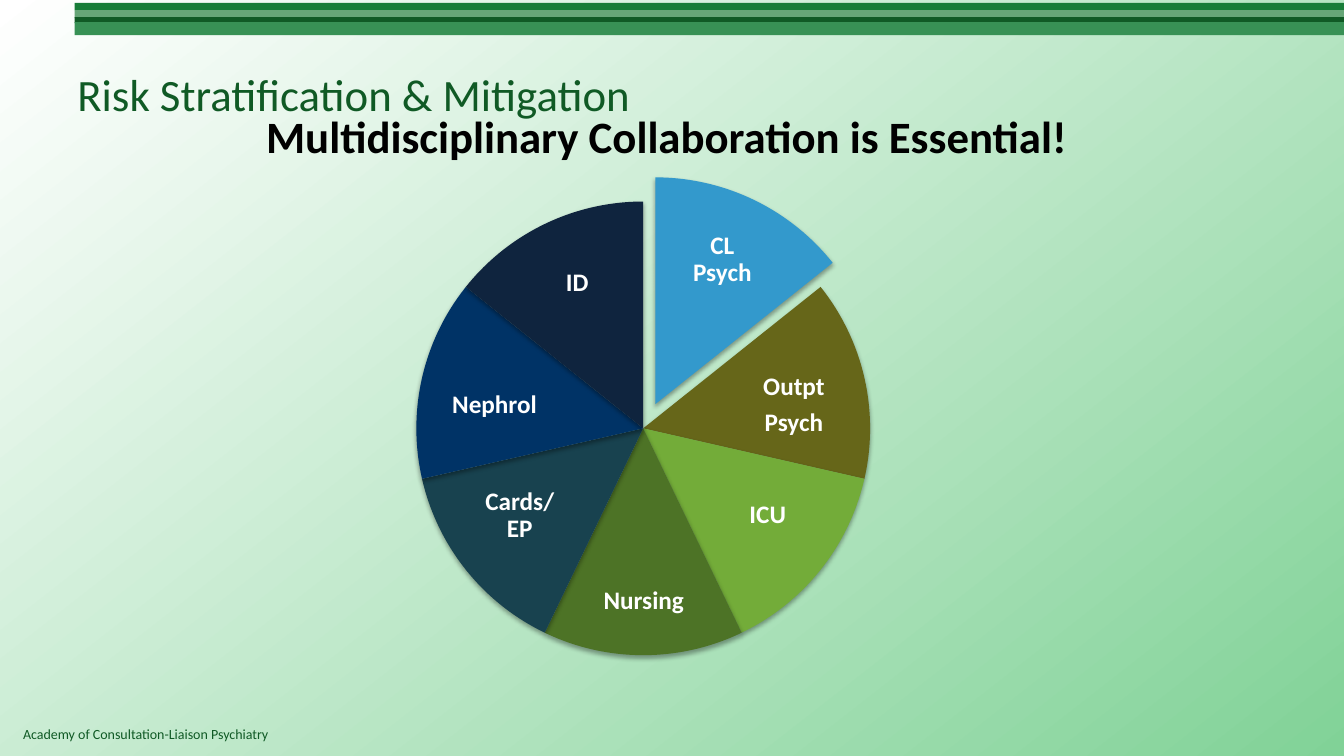
from pptx import Presentation
from pptx.dml.color import RGBColor
from pptx.enum.shapes import MSO_SHAPE as SHAPE
from pptx.enum.text import MSO_ANCHOR as ANCHOR, PP_ALIGN as ALIGN
from pptx.oxml import parse_xml
from pptx.util import Inches, Pt

WHITE = RGBColor(0xFF, 0xFF, 0xFF)
BLACK = RGBColor(0, 0, 0)
MINT = RGBColor(0x81, 0xD2, 0x97)
GREEN = RGBColor(0x17, 0x7D, 0x38)
SAGE = RGBColor(0x66, 0xA6, 0x77)
PINE = RGBColor(0x10, 0x5A, 0x25)
FERN = RGBColor(0x38, 0x91, 0x55)
SKY = RGBColor(0x33, 0x99, 0xCC)
OLIVE = RGBColor(0x66, 0x66, 0x19)
LIME = RGBColor(0x73, 0xAC, 0x39)
MOSS = RGBColor(0x4D, 0x73, 0x26)
TEAL = RGBColor(0x18, 0x42, 0x4F)
NAVY = RGBColor(0x00, 0x33, 0x66)
INK = RGBColor(0x0F, 0x24, 0x3E)

SHADOW = (
    '<a:outerShdw xmlns:a="http://schemas.openxmlformats.org/drawingml/2006/main"'
    ' blurRad="40000" dist="23000" dir="5400000" rotWithShape="0">'
    '<a:srgbClr val="000000"><a:alpha val="35000"/></a:srgbClr></a:outerShdw>'
)

prs = Presentation()
prs.slide_width, prs.slide_height = Inches(13.33), Inches(7.5)
slide = prs.slides.add_slide(prs.slide_layouts[6])
shapes = slide.shapes


def add_text(text, box, size, color, bold=False, align=ALIGN.LEFT,
             anchor=ANCHOR.TOP, inset=None, line=None, after=None):
    """Add a text box with one paragraph for each line of text."""
    frame = shapes.add_textbox(*map(Inches, box)).text_frame
    frame.word_wrap = True
    frame.vertical_anchor = anchor
    if inset is not None:
        frame.margin_left = frame.margin_right = Inches(inset)
        frame.margin_top = frame.margin_bottom = Inches(inset)
    frame.text = text
    for para in frame.paragraphs:
        para.alignment = align
        para.line_spacing = line
        para.space_after = after
        font = para.runs[0].font
        font.name, font.size, font.bold = "Calibri", Pt(size), bold
        font.color.rgb = color


def add_solid(kind, box, color):
    """Add a filled shape without outline or shadow."""
    shape = shapes.add_shape(kind, *map(Inches, box))
    shape.fill.solid()
    shape.fill.fore_color.rgb = color
    shape.line.fill.background()
    shape.shadow.inherit = False
    return shape


# Background
fill = slide.background.fill
fill.gradient()
fill.gradient_angle = 308
for stop, color in zip(fill.gradient_stops, (WHITE, MINT)):
    stop.color.rgb = color

# Top stripes
for top, height, color in ((0.03, 0.07, GREEN), (0.1, 0.08, SAGE),
                           (0.17, 0.06, PINE), (0.22, 0.13, FERN)):
    add_solid(SHAPE.RECTANGLE, (0.74, top, 12.59, height), color)

# Headings and footer
add_text("Academy of Consultation-Liaison Psychiatry",
         (0.13, 7.15, 9.25, 0.27), 10, PINE)
add_text("Risk Stratification & Mitigation", (0.67, 0.3, 12, 1.25), 32, PINE,
         anchor=ANCHOR.MIDDLE)
add_text("Multidisciplinary Collaboration is Essential!",
         (2.17, 1.03, 8.89, 1.11), 32, BLACK, bold=True, align=ALIGN.CENTER)

# Wheel: equal slices clockwise from the top, the first pulled out
slices = (
    ("CL Psych", SKY, (6.73, 2.3, 0.87, 0.55)),
    ("Outpt\nPsych", OLIVE, (7.41, 3.73, 0.93, 0.59)),
    ("ICU", LIME, (7.2, 4.81, 0.83, 0.61)),
    ("Nursing", MOSS, (5.88, 5.66, 1.01, 0.61)),
    ("Cards/EP", TEAL, (4.74, 4.81, 0.83, 0.61)),
    ("Nephrol", NAVY, (4.44, 3.73, 0.93, 0.59)),
    ("ID", INK, (5.29, 2.54, 0.87, 0.55)),
)
FULL = 216  # a full turn in adjustment units
STEP = FULL / len(slices)
for i, (name, color, box) in enumerate(slices):
    left, top = (4.13, 2) if i else (4.25, 1.76)
    wedge = add_solid(SHAPE.PIE, (left, top, 4.5, 4.5), color)
    start = FULL * 0.75 + i * STEP
    wedge.adjustments[0] = start % FULL
    wedge.adjustments[1] = (start + STEP) % FULL
    effects = wedge.element.spPr.find("{*}effectLst")
    effects.append(parse_xml(SHADOW))
    add_text(name, box, 18, WHITE, bold=True, align=ALIGN.CENTER,
             anchor=ANCHOR.MIDDLE, inset=0.03, line=0.9, after=Pt(6.3))

prs.save("out.pptx")
